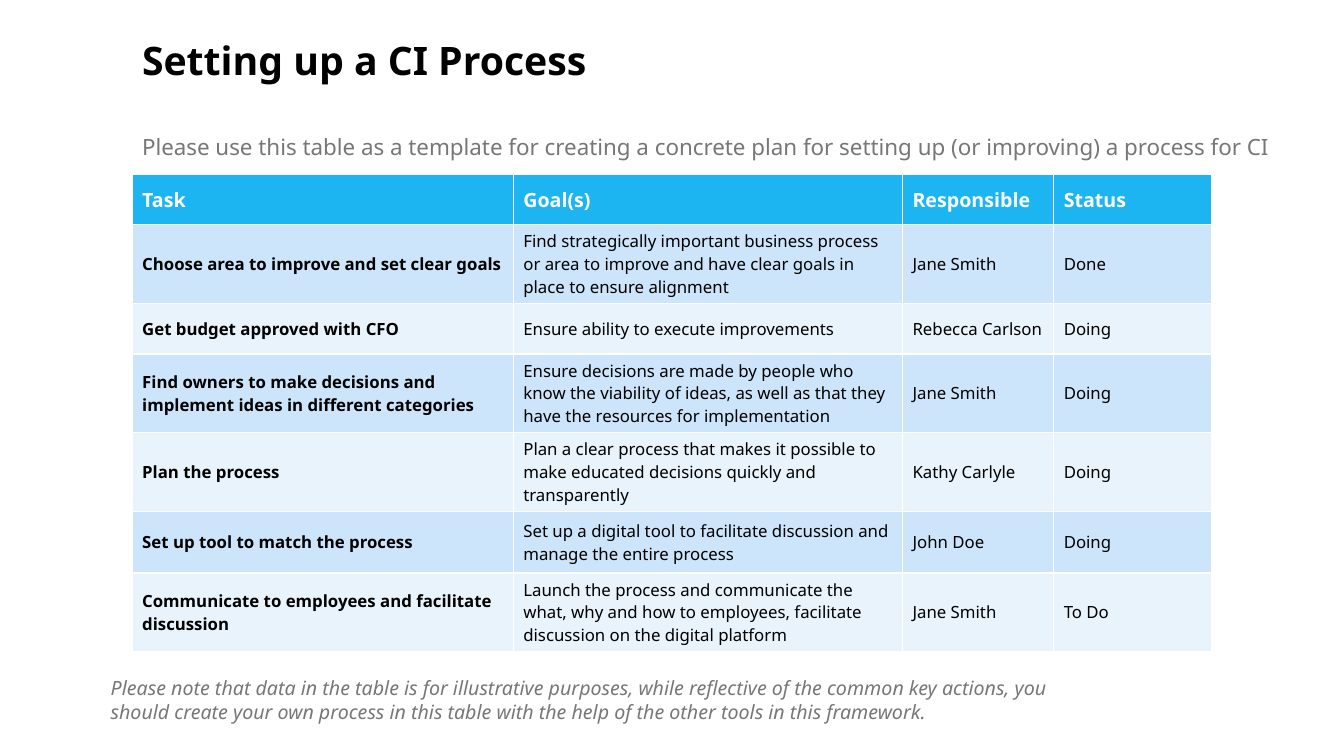
from dataclasses import dataclass

from lxml import etree
from pptx import Presentation
from pptx.dml.color import RGBColor
from pptx.enum.text import MSO_ANCHOR, PP_ALIGN
from pptx.oxml.ns import qn
from pptx.util import Inches, Pt

MIDDLE, TOP = MSO_ANCHOR.MIDDLE, MSO_ANCHOR.TOP
LEFT = PP_ALIGN.LEFT

FONT = "Noto Sans"
BLACK = RGBColor(0x00, 0x00, 0x00)
WHITE = RGBColor(0xFF, 0xFF, 0xFF)
GREY = RGBColor(0x77, 0x77, 0x77)
HEADER_BLUE = RGBColor(0x1C, 0xB5, 0xF2)
BANDS = (RGBColor(0xCD, 0xE5, 0xFA), RGBColor(0xE8, 0xF3, 0xFC))

# The slide is a grid of 100 columns by 100 rows
WIDTH, HEIGHT = Inches(13.33), Inches(7.5)
MARGIN = 9.83
COLUMN_WIDTHS = (28.36, 28.96, 11.25, 11.78)
ONE_LINE, TWO_LINES, THREE_LINES = 6.67, 8.13, 10.42


@dataclass
class Task:
    name: str
    goal: str
    responsible: str
    status: str
    height: float = THREE_LINES


@dataclass
class TextBlock:
    text: str
    left: float
    top: float
    width: float
    height: float
    size: int
    color: RGBColor = GREY
    bold: bool = False
    italic: bool = False
    wrap: bool = True
    anchor: MSO_ANCHOR = TOP
    spacing: float = 1.0


HEADINGS = ("Task", "Goal(s)", "Responsible", "Status")
TASKS = [
    Task("Choose area to improve and set clear goals",
         "Find strategically important business process or area to improve "
         "and have clear goals in place to ensure alignment",
         "Jane Smith", "Done"),
    Task("Get budget approved with CFO",
         "Ensure ability to execute improvements",
         "Rebecca Carlson", "Doing", ONE_LINE),
    Task("Find owners to make decisions and implement ideas in different categories",
         "Ensure decisions are made by people who know the viability of ideas, "
         "as well as that they have the resources for implementation",
         "Jane Smith", "Doing"),
    Task("Plan the process",
         "Plan a clear process that makes it possible to make educated "
         "decisions quickly and transparently",
         "Kathy Carlyle", "Doing"),
    Task("Set up tool to match the process",
         "Set up a digital tool to facilitate discussion and manage the entire process",
         "John Doe", "Doing", TWO_LINES),
    Task("Communicate to employees and facilitate discussion",
         "Launch the process and communicate the what, why and how to employees, "
         "facilitate discussion on the digital platform",
         "Jane Smith", "To Do"),
]

TITLE = TextBlock("Setting up a CI Process", MARGIN, 5.87, 41.34, 4.93, 28,
                  color=BLACK, bold=True, anchor=MIDDLE, spacing=0.9)
NOTE = TextBlock(
    "Please note that data in the table is for illustrative purposes, while "
    "reflective of the common key actions, you should create your own process "
    "in this table with the help of the other tools in this framework.",
    7.5, 88.8, 75.62, 7.6, 14, italic=True)
SUBTITLE = TextBlock(
    "Please use this table as a template for creating a concrete plan for "
    "setting up (or improving) a process for CI",
    MARGIN, 16.93, 86.05, 4.93, 16, wrap=False)


def cols(n: float) -> int:
    return round(WIDTH * n / 100)


def rows(n: float) -> int:
    return round(HEIGHT * n / 100)


def write(tf, text: str, *, size: int, color: RGBColor, bold: bool = False,
          italic: bool = False, spacing: float = 1.0) -> None:
    p = tf.paragraphs[0]
    p.alignment = LEFT
    p.line_spacing = spacing
    r = p.add_run()
    r.text = text
    r.font.name = FONT
    r.font.size = Pt(size)
    r.font.color.rgb = color
    r.font.bold = bold
    r.font.italic = italic


def add_text(slide, block: TextBlock) -> None:
    sp = slide.shapes.add_textbox(cols(block.left), rows(block.top),
                                  cols(block.width), rows(block.height))
    tf = sp.text_frame
    tf.word_wrap = block.wrap
    tf.vertical_anchor = block.anchor
    write(tf, block.text, size=block.size, color=block.color,
          bold=block.bold, italic=block.italic, spacing=block.spacing)


def set_borders(cell, color: RGBColor) -> None:
    tc_pr = cell._tc.get_or_add_tcPr()
    for i, side in enumerate(("lnL", "lnR", "lnT", "lnB")):
        ln = etree.Element(qn(f"a:{side}"), w=str(Pt(1)))
        fill = etree.SubElement(ln, qn("a:solidFill"))
        etree.SubElement(fill, qn("a:srgbClr"), val=str(color))
        tc_pr.insert(i, ln)


def fill_cell(cell, text: str, fill: RGBColor, **text_format) -> None:
    cell.fill.solid()
    cell.fill.fore_color.rgb = fill
    cell.vertical_anchor = MIDDLE
    set_borders(cell, WHITE)
    write(cell.text_frame, text, **text_format)


def add_task_table(slide, tasks: list[Task]) -> None:
    heights = [ONE_LINE] + [task.height for task in tasks]
    table = slide.shapes.add_table(
        len(heights), len(HEADINGS), cols(MARGIN), rows(23.07),
        cols(sum(COLUMN_WIDTHS)), rows(sum(heights))).table
    for column, width in zip(table.columns, COLUMN_WIDTHS):
        column.width = cols(width)
    for row, height in zip(table.rows, heights):
        row.height = rows(height)

    # Header row
    for c, heading in enumerate(HEADINGS):
        fill_cell(table.cell(0, c), heading, HEADER_BLUE,
                  size=14, color=WHITE, bold=True)

    # Task rows in alternating bands
    for i, task in enumerate(tasks):
        values = (task.name, task.goal, task.responsible, task.status)
        for c, value in enumerate(values):
            fill_cell(table.cell(i + 1, c), value, BANDS[i % 2],
                      size=12, color=BLACK, bold=c == 0)


def main() -> None:
    prs = Presentation()
    prs.slide_width, prs.slide_height = WIDTH, HEIGHT
    slide = prs.slides.add_slide(prs.slide_layouts[6])
    add_text(slide, TITLE)
    add_task_table(slide, TASKS)
    add_text(slide, NOTE)
    add_text(slide, SUBTITLE)
    prs.save("out.pptx")


if __name__ == "__main__":
    main()
